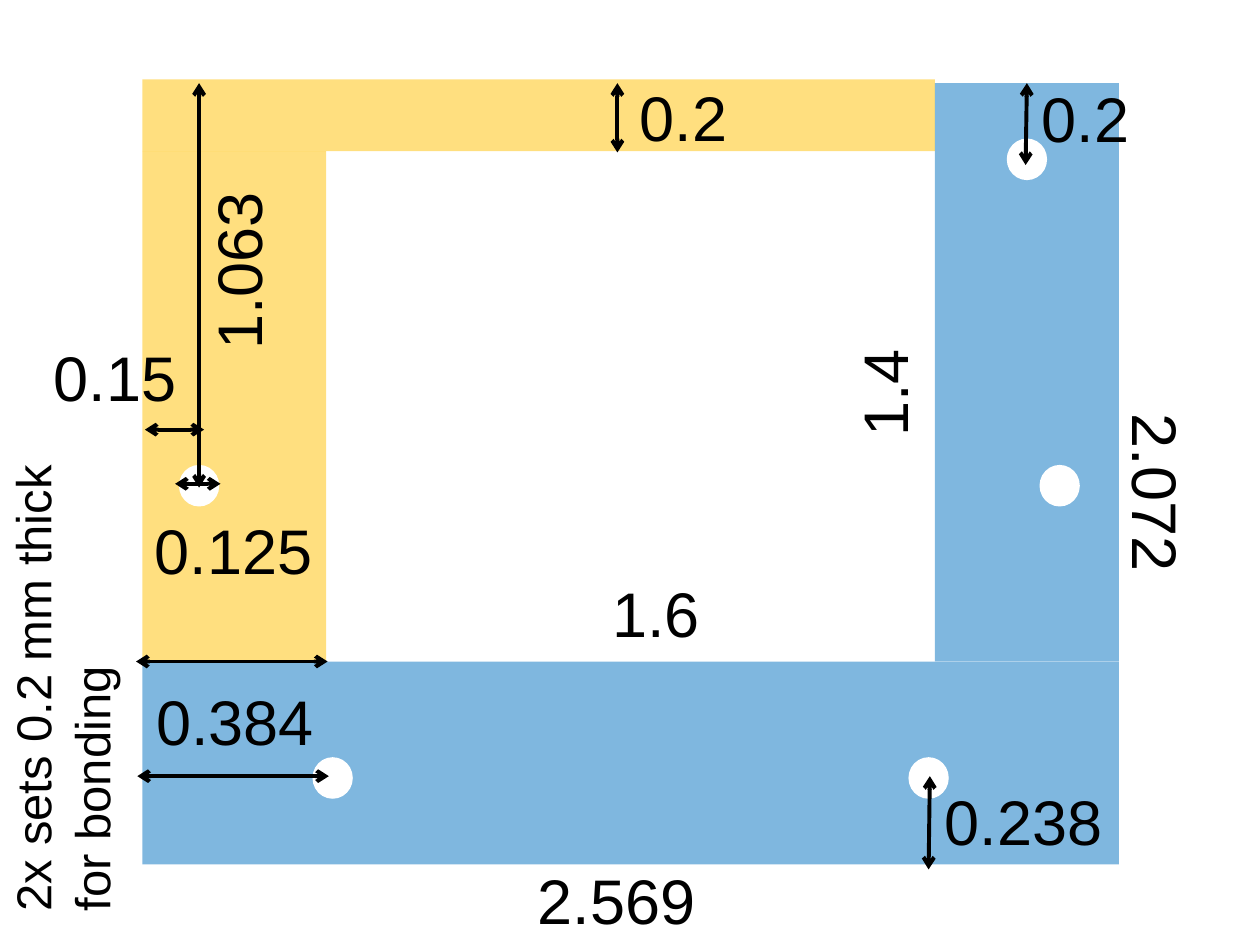
from dataclasses import dataclass

from lxml.etree import SubElement
from pptx import Presentation
from pptx.dml.color import RGBColor
from pptx.enum.shapes import MSO_CONNECTOR as Connector, MSO_SHAPE as Shape
from pptx.enum.text import MSO_AUTO_SIZE as AutoSize
from pptx.oxml.ns import qn
from pptx.util import Inches, Pt

COLUMNS, ROWS = 100, 75
BLUE, YELLOW, WHITE, BLACK = "0070C0", "FFC000", "FFFFFF", "000000"


@dataclass
class Box:
    left: float
    top: float
    width: float
    height: float

    def inner(self, left, top, width, height):
        return Box(self.left + left, self.top + top, width, height)

    def centered(self, x, y, width, height):
        return self.inner(x - width / 2, y - height / 2, width, height)

    def emu(self):
        return [grid(value) for value in (self.left, self.top, self.width, self.height)]


def grid(units):
    return Inches(units * 10 / COLUMNS)


def paint(color_format, color):
    color_format.rgb = RGBColor.from_string(color)


def add_filled(slide, preset, box, color, opacity=100):
    shape = slide.shapes.add_shape(preset, *box.emu())
    shape.shadow.inherit = False
    shape.line.fill.background()
    shape.fill.solid()
    paint(shape.fill.fore_color, color)
    if opacity < 100:
        color_element = shape.fill._xPr.find(qn("a:solidFill"))[0]
        SubElement(color_element, qn("a:alpha"), val=str(opacity * 1000))


def add_text(slide, box, lines, size, rotation=0):
    shape = slide.shapes.add_textbox(*box.emu())
    shape.rotation = rotation
    frame = shape.text_frame
    frame.word_wrap = False
    frame.auto_size = AutoSize.SHAPE_TO_FIT_TEXT
    for index, line in enumerate(lines):
        paragraph = frame.add_paragraph() if index else frame.paragraphs[0]
        run = paragraph.add_run()
        run.text = line
        run.font.name = "Arial"
        run.font.size = Pt(size)
        paint(run.font.color, BLACK)


def add_arrow(slide, box, start_x, start_y, end_x, end_y):
    points = [box.left + start_x, box.top + start_y, box.left + end_x, box.top + end_y]
    connector = slide.shapes.add_connector(
        Connector.STRAIGHT, *[grid(point) for point in points]
    )
    connector.line.width = Pt(2.25)
    paint(connector.line.color, BLACK)
    line = connector.line._get_or_add_ln()
    for end in ("a:headEnd", "a:tailEnd"):
        SubElement(line, qn(end), type="arrow")
    SubElement(connector._element.spPr, qn("a:effectLst"))


def draw_frame(slide, box):
    side, rim, base = 14.6, 5.7, 46.2
    right = box.width - side
    bars = [
        (0, base, box.width, box.height - base, BLUE),
        (0, 0, right, rim, YELLOW),
        (right, 0.3, side, base - 0.3, BLUE),
        (0, rim, side, base - rim, YELLOW),
    ]
    for *place, color in bars:
        add_filled(slide, Shape.RECTANGLE, box.inner(*place), color, 50)


def draw_holes(slide, box):
    centers = [(4.5, 32.25), (72.8, 32.25), (70.2, 6.35), (15.1, 55.45), (62.4, 55.45)]
    for x, y in centers:
        add_filled(slide, Shape.OVAL, box.centered(x, y, 3.2, 3.3), WHITE)


def draw_arrows(slide, box):
    arrows = [
        (4.9, 27.8, 0.2, 27.8),
        (6.2, 32.1, 2.6, 32.1),
        (4.5, 32.4, 4.5, 0.3),
        (37.7, 5.8, 37.7, 0.3),
        (14.7, 46.2, -0.5, 46.2),
        (14.8, 55.3, -0.4, 55.3),
        (62.4, 62.7, 62.5, 55.3),
        (70.1, 6.8, 70.2, 0.3),
    ]
    for arrow in arrows:
        add_arrow(slide, box, *arrow)


def draw_measures(slide, box):
    measures = [
        ("0.15", -2.1, 23.65, 0),
        ("2.072", 80.5, 32.85, 90),
        ("2.569", 37.7, 65.15, 0),
        ("1.4", 58.9, 24.85, 270),
        ("0.2", 43, 2.95, 0),
        ("1.063", 7.6, 15.15, 270),
        ("1.6", 40.8, 42.35, 0),
        ("0.125", 7.3, 37.35, 0),
        ("0.384", 7.4, 50.95, 0),
        ("0.238", 70, 58.85, 0),
        ("0.2", 74.9, 3.05, 0),
    ]
    for text, x, y, rotation in measures:
        width = 0.6 + 2.8 * len(text)
        add_text(slide, box.centered(x, y, width, 7.1), [text], 36, rotation)


def draw_note(slide, box):
    add_text(slide, box, ["2x sets 0.2 mm thick", "for bonding"], 28, 270)


def main():
    presentation = Presentation()
    presentation.slide_width = grid(COLUMNS)
    presentation.slide_height = grid(ROWS)
    slide = presentation.slides.add_slide(presentation.slide_layouts[6])
    plate = Box(11.3, 6.3, 77.5, 62.3)
    for draw in (draw_frame, draw_holes, draw_arrows, draw_measures):
        draw(slide, plate)
    draw_note(slide, Box(-14, 49.2, 37.8, 10.4))
    presentation.save("out.pptx")


if __name__ == "__main__":
    main()
